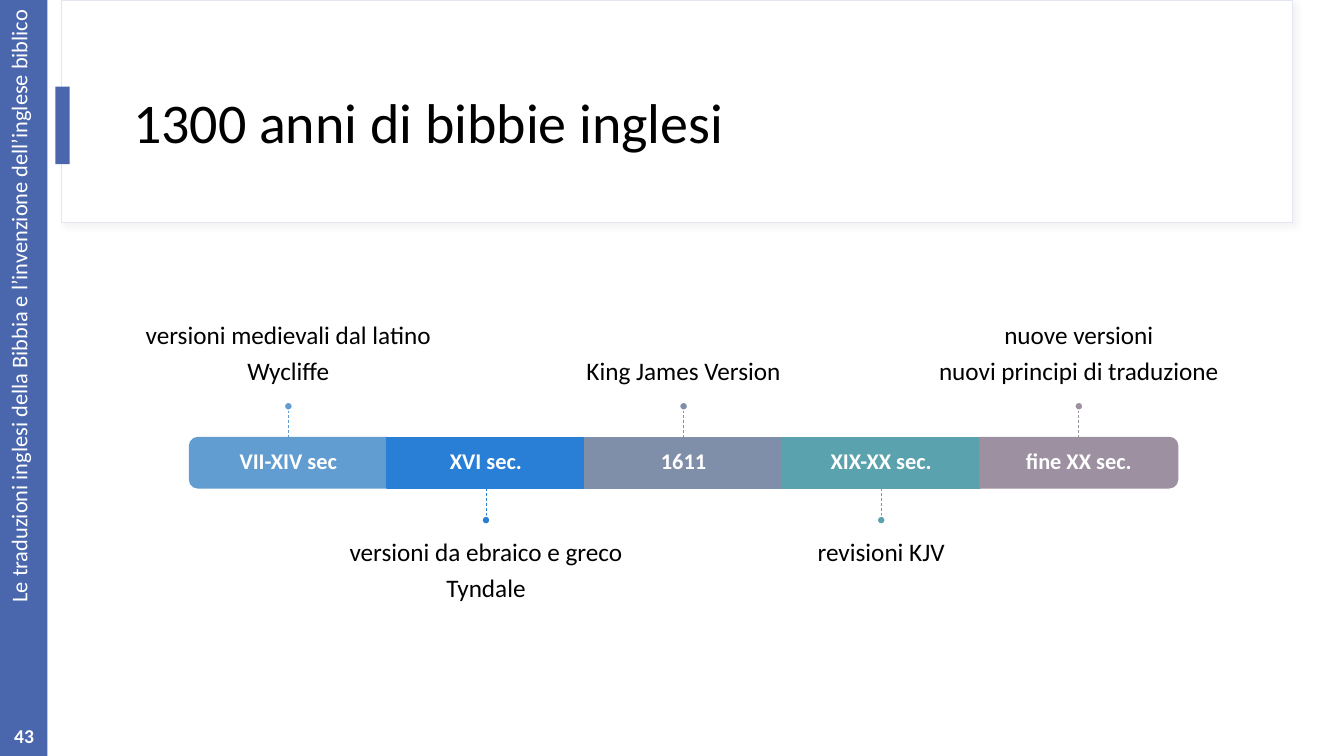
from dataclasses import dataclass

from lxml.etree import SubElement
from pptx import Presentation
from pptx.dml.color import RGBColor
from pptx.enum.dml import MSO_LINE
from pptx.enum.shapes import MSO_CONNECTOR, MSO_SHAPE
from pptx.enum.text import MSO_ANCHOR, PP_ALIGN
from pptx.oxml.ns import qn
from pptx.util import Inches, Pt


@dataclass(frozen=True)
class Theme:
    font: str = "Calibri"
    accent: str = "4A66AC"
    frame: str = "E4E5F3"
    shadow: str = "D9D9D9"
    white: str = "FFFFFF"
    black: str = "000000"
    title: int = 40
    event: int = 18
    label: int = 16
    number: int = 14


THEME = Theme()

SEGMENT_LEFT, SEGMENT_TOP = 1.88, 4.34
SEGMENT_WIDTH, SEGMENT_HEIGHT = 1.96, 0.5
EVENT_WIDTH, EVENT_HEIGHT = 3.27, 1.41
DOT_SIZE = 0.08

PERIODS = [
    ("VII-XIV sec", "629DD1", ["versioni medievali dal latino", "Wycliffe"]),
    ("XVI sec.", "297FD5", ["versioni da ebraico e greco", "Tyndale"]),
    ("1611", "7F8FA9", ["King James Version"]),
    ("XIX-XX sec.", "5AA2AE", ["revisioni KJV"]),
    ("fine XX sec.", "9D90A0", ["nuove versioni", "nuovi principi di traduzione"]),
]


def box(*lengths):
    return [Inches(length) for length in lengths]


def apply(target, formats):
    for name, value in formats.items():
        setattr(target, name, value)


def write(sp, lines, size, color=THEME.black, bold=False, insets=(0.1, 0.05, 0.1, 0.05),
          anchor=MSO_ANCHOR.MIDDLE, paragraph=None):
    tf = sp.text_frame
    left, top, right, bottom = box(*insets)
    apply(tf, {"word_wrap": True, "vertical_anchor": anchor, "margin_left": left,
               "margin_top": top, "margin_right": right, "margin_bottom": bottom})
    tf.text = "\n".join(lines)
    for p in tf.paragraphs:
        apply(p, {"alignment": PP_ALIGN.CENTER, **(paragraph or {})})
        for r in p.runs:
            apply(r.font, {"name": THEME.font, "size": Pt(size), "bold": bold})
            r.font.color.rgb = RGBColor.from_string(color)


def add_text(s, at, lines, size, **formats):
    write(s.shapes.add_textbox(*box(*at)), lines, size, **formats)


def add_block(s, kind, at, fill, line=None, width=1):
    sp = s.shapes.add_shape(kind, *box(*at))
    sp.shadow.inherit = False
    sp.fill.solid()
    sp.fill.fore_color.rgb = RGBColor.from_string(fill)
    if line:
        sp.line.color.rgb = RGBColor.from_string(line)
        sp.line.width = Pt(width)
    else:
        sp.line.fill.background()
    return sp


def add_soft_shadow(sp):
    effects = sp._element.spPr.find(qn("a:effectLst"))
    shadow = SubElement(effects, qn("a:outerShdw"), blurRad=str(Pt(4)), dist=str(Pt(3)),
                        dir="2700000", algn="tl", rotWithShape="0")
    color = SubElement(shadow, qn("a:srgbClr"), val=THEME.shadow)
    SubElement(color, qn("a:alpha"), val="30000")


def add_stem(s, x, dot_y, bar_y, color):
    stem = s.shapes.add_connector(MSO_CONNECTOR.STRAIGHT, *box(x, dot_y, x, bar_y))
    apply(stem.line, {"width": Pt(0.5), "dash_style": MSO_LINE.DASH})
    stem.line.color.rgb = RGBColor.from_string(color)
    SubElement(stem._element.spPr, qn("a:effectLst"))
    return stem


def add_segment(s, index, color):
    left = SEGMENT_LEFT + index * SEGMENT_WIDTH
    rotation = {0: 270, len(PERIODS) - 1: 90}.get(index)
    if rotation is None:
        return add_block(s, MSO_SHAPE.RECTANGLE,
                         (left, SEGMENT_TOP, SEGMENT_WIDTH, SEGMENT_HEIGHT), color, color)
    shift = (SEGMENT_WIDTH - SEGMENT_HEIGHT) / 2
    sp = add_block(s, MSO_SHAPE.ROUND_2_SAME_RECTANGLE,
                   (left + shift, SEGMENT_TOP - shift, SEGMENT_HEIGHT, SEGMENT_WIDTH),
                   color, color)
    sp.rotation = rotation
    return sp


def add_period(s, index, label, color, event):
    left = SEGMENT_LEFT + index * SEGMENT_WIDTH
    center = left + SEGMENT_WIDTH / 2
    above = index % 2 == 0
    segment = add_segment(s, index, color)
    add_text(s, (left, SEGMENT_TOP, SEGMENT_WIDTH, SEGMENT_HEIGHT), [label], THEME.label,
             color=THEME.white, bold=True, insets=(0.13,) * 4,
             paragraph={"line_spacing": 0.9})
    add_text(s, (center - EVENT_WIDTH / 2, 2.57 if above else 5.2, EVENT_WIDTH, EVENT_HEIGHT),
             event, THEME.event,
             insets=(0, 0, 0, 0.15) if above else (0, 0.15, 0, 0),
             anchor=MSO_ANCHOR.BOTTOM if above else MSO_ANCHOR.TOP,
             paragraph={"line_spacing": 0.9, "space_after": Pt(0.35 * THEME.event)})
    dot_y, bar_y = (4.07, SEGMENT_TOP) if above else (5.12, SEGMENT_TOP + SEGMENT_HEIGHT)
    stem = add_stem(s, center, dot_y, bar_y, color)
    if segment.rotation == 0:
        stem.end_connect(segment, 0 if above else 2)
    add_block(s, MSO_SHAPE.OVAL,
              (center - DOT_SIZE / 2, 3.99 if above else 5.12, DOT_SIZE, DOT_SIZE),
              color, THEME.white)


def add_sidebar(s):
    bar = add_block(s, MSO_SHAPE.RECTANGLE, (0, 0, 0.47, 7.5), THEME.accent)
    write(bar, ["Le traduzioni inglesi della Bibbia e l’invenzione dell’inglese biblico"],
          THEME.label, color=THEME.white, insets=(0.1, 0.1, 0.1, 0.05),
          anchor=MSO_ANCHOR.TOP, paragraph={"alignment": PP_ALIGN.RIGHT})
    bar.text_frame._txBody.bodyPr.set("vert", "vert270")


def add_title(s, text):
    frame = add_block(s, MSO_SHAPE.RECTANGLE, (0.61, 0, 12.21, 2.21),
                      THEME.white, THEME.frame, 0.75)
    add_soft_shadow(frame)
    add_block(s, MSO_SHAPE.RECTANGLE, (0.55, 0.86, 0.14, 0.77), THEME.accent)
    title = s.shapes.title
    left, top, width, height = box(1.22, 0.6, 11.12, 1.29)
    apply(title, {"left": left, "top": top, "width": width, "height": height})
    write(title, [text], THEME.title,
          paragraph={"alignment": PP_ALIGN.LEFT, "line_spacing": 0.9})
    s.shapes._spTree.append(title._element)


def main():
    prs = Presentation()
    prs.slide_width, prs.slide_height = box(13.33, 7.5)
    s = prs.slides.add_slide(prs.slide_layouts[5])
    add_sidebar(s)
    add_text(s, (0.01, 7.1, 0.46, 0.4), ["43"], THEME.number, color=THEME.white, bold=True)
    add_title(s, "1300 anni di bibbie inglesi")
    for index, period in enumerate(PERIODS):
        add_period(s, index, *period)
    prs.save("out.pptx")


if __name__ == "__main__":
    main()
